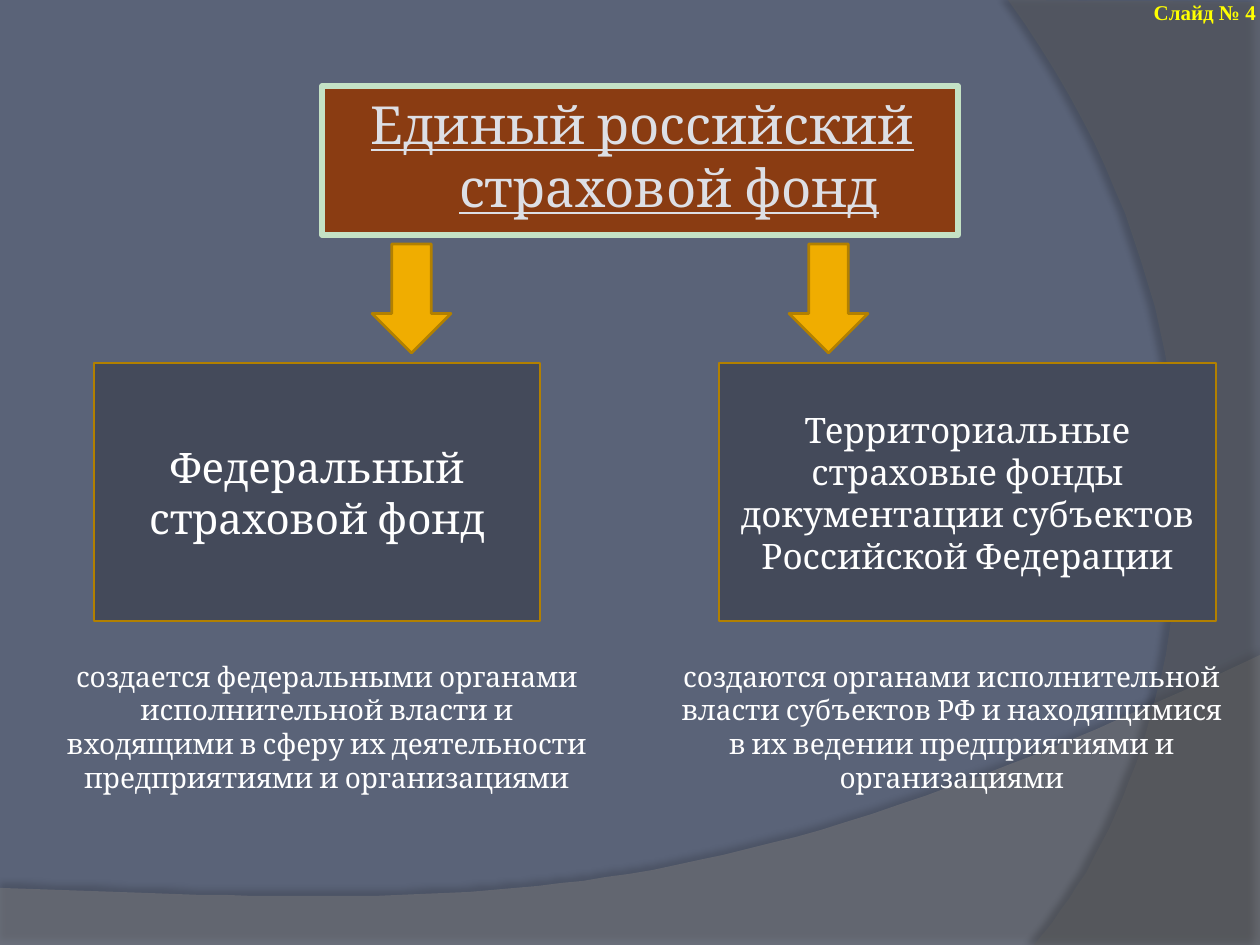
from lxml.etree import SubElement
from pptx import Presentation
from pptx.dml.color import RGBColor
from pptx.enum.shapes import MSO_SHAPE
from pptx.enum.text import MSO_ANCHOR, MSO_AUTO_SIZE, PP_ALIGN
from pptx.oxml.ns import qn
from pptx.util import Pt

SCALE = 914400 / 126  # EMU per px


def emu(px):
    return round(px * SCALE)


def color(code):
    return RGBColor.from_string(code)


def curve(a, b, c, d, steps=48):
    """Points of a cubic Bezier from a to d, without a itself."""
    points = []
    for i in range(1, steps + 1):
        t = i / steps
        u = 1 - t
        points.append(tuple(
            round(u**3 * p + 3 * u * u * t * q + 3 * u * t * t * r + t**3 * s)
            for p, q, r, s in zip(a, b, c, d)))
    return points


class Board:
    font = "Cambria"
    white = "FFFFFF"
    gold = "B28000"

    def __init__(self, slide, back):
        self.slide = slide
        slide.background.fill.solid()
        slide.background.fill.fore_color.rgb = color(back)

    def paint(self, shape, fill, line=None, width=1.5):
        shape.fill.solid()
        shape.fill.fore_color.rgb = color(fill)
        if line:
            shape.line.color.rgb = color(line)
            shape.line.width = Pt(width)
        else:
            shape.line.fill.background()

    def letter(self, shape, text, size, ink=white, anchor=MSO_ANCHOR.MIDDLE,
               align=PP_ALIGN.CENTER, font=font):
        """Put one styled paragraph into the shape and return it."""
        frame = shape.text_frame
        frame.word_wrap = True
        frame.vertical_anchor = anchor
        frame.text = text
        par = frame.paragraphs[0]
        par.alignment = align
        par.font.size = Pt(size)
        par.font.name = font
        par.font.color.rgb = color(ink)
        return par

    def swoosh(self, points, fill, alpha, dark, dist, angle):
        """Translucent outline with a soft shadow; alphas are in percent."""
        pen = self.slide.shapes.build_freeform(*points[0], scale=SCALE)
        pen.add_line_segments(points[1:], close=True)
        shape = pen.convert_to_shape()
        self.paint(shape, fill)
        shape.shadow.inherit = False
        props = shape.element.spPr
        tint = props.find(qn("a:solidFill")).find(qn("a:srgbClr"))
        SubElement(tint, qn("a:alpha"), val=str(alpha * 1000))
        cast = SubElement(props.find(qn("a:effectLst")), qn("a:outerShdw"),
                          blurRad=str(Pt(4)), dist=str(Pt(dist)),
                          dir=str(angle * 60000), algn="ctr", rotWithShape="0")
        tint = SubElement(cast, qn("a:srgbClr"), val="000000")
        SubElement(tint, qn("a:alpha"), val=str(dark * 1000))

    def title(self, text, *box):
        shape = self.slide.shapes.title
        shape.left, shape.top, shape.width, shape.height = map(emu, box)
        self.paint(shape, "8A3C12", "C4E2C5", 3)
        par = self.letter(shape, text, 30, "DDDFE5", MSO_ANCHOR.TOP)
        shape.text_frame.auto_size = MSO_AUTO_SIZE.NONE
        par.font.underline = True
        par.space_before = Pt(6)
        props = par._p.get_or_add_pPr()
        props.set("marL", str(emu(58)))
        props.set("indent", str(-emu(53)))

    def shape(self, kind, fill, *box):
        shape = self.slide.shapes.add_shape(kind, *map(emu, box))
        shape.shadow.inherit = False
        self.paint(shape, fill, self.gold)
        return shape

    def block(self, text, size, *box):
        self.letter(self.shape(MSO_SHAPE.RECTANGLE, "444A5A", *box), text, size)

    def arrow(self, *box):
        self.shape(MSO_SHAPE.DOWN_ARROW, "F0AD00", *box)

    def note(self, text, *box):
        self.letter(self.slide.shapes.add_textbox(*map(emu, box)), text, 16)

    def label(self, text, *box):
        shape = self.slide.shapes.add_textbox(*map(emu, box))
        frame = shape.text_frame
        frame.margin_left = frame.margin_right = 0
        frame.margin_top = frame.margin_bottom = 0
        par = self.letter(shape, text, 12, "FFFF00", MSO_ANCHOR.TOP,
                          PP_ALIGN.RIGHT, "Times New Roman")
        par.font.bold = True


def main():
    deck = Presentation()
    deck.slide_width, deck.slide_height = emu(1260), emu(945)
    board = Board(deck.slides.add_slide(deck.slide_layouts[5]), "5A6378")

    wave = curve((1260, 655), (704, 919), (493, 906), (0, 888))
    board.swoosh([(0, 946), (1260, 946), (1260, 655)] + wave,
                 "7F7F7F", 45, 35, 3.5, 270)
    side = curve((1034, 945), (1178, 780), (1283, 378), (1008, 0))
    board.swoosh([(1260, 2), (1260, 945), (1034, 945)] + side,
                 "5E5E5E", 40, 45, 4, 180)

    board.title("Единый российский страховой фонд", 322, 86, 636, 149)
    columns = [
        ("Федеральный страховой фонд", 24, 94, 446, 372,
         "создается федеральными органами исполнительной власти и входящими "
         "в сферу их деятельности предприятиями и организациями", 54, 546),
        ("Территориальные страховые фонды документации субъектов "
         "Российской Федерации", 20, 719, 497, 789,
         "создаются органами исполнительной власти субъектов РФ и "
         "находящимися в их ведении предприятиями и организациями", 669, 566),
    ]
    for name, size, left, width, tip, text, start, span in columns:
        board.block(name, size, left, 363, width, 258)
        board.arrow(tip, 244, 79, 109)
        board.note(text, start, 642, span, 169)
    board.label("Слайд № 4", 1104, 0, 152, 25)
    deck.save("out.pptx")


if __name__ == "__main__":
    main()
